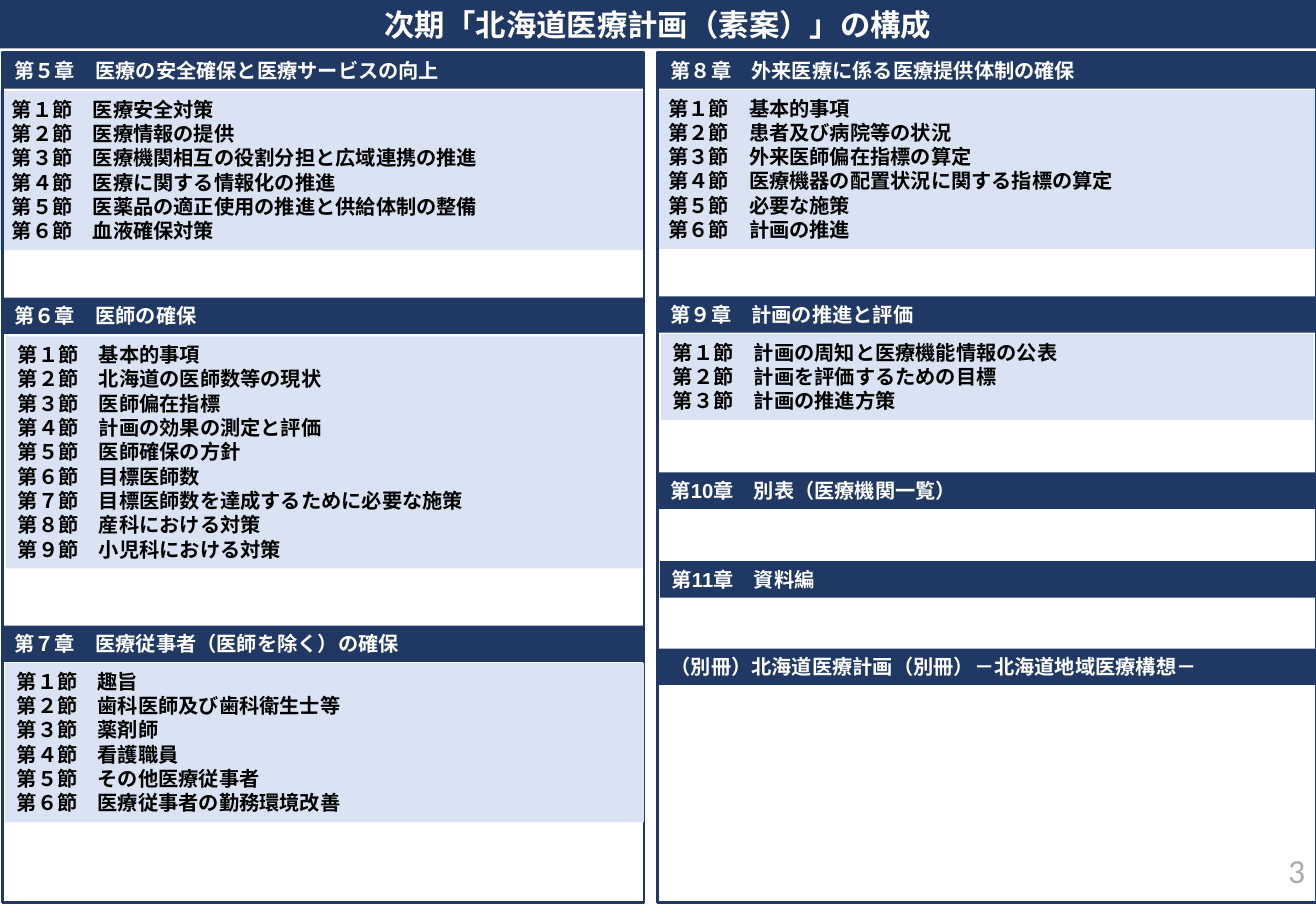
from itertools import groupby

from pptx import Presentation
from pptx import util as u
from pptx.dml.color import RGBColor
from pptx.enum import shapes, text

PX = 9144  # 100 px to the inch
COLORS = {"navy": "203864", "pale": "DAE3F3", "white": "FFFFFF",
          "black": "000000", "gray": "AFABAB"}
HEADING_HEIGHT, LINE_HEIGHT, LIST_PADDING = 30, 20, 11

deck = Presentation()
deck.slide_width, deck.slide_height = 1083 * PX, 750 * PX
slide = deck.slides.add_slide(deck.slide_layouts[6])


def add_panel(box, fill=None, lines=(), color="white", size=12,
              align=text.PP_ALIGN.LEFT):
    panel = slide.shapes.add_shape(shapes.MSO_SHAPE.RECTANGLE, *(n * PX for n in box))
    panel.shadow.inherit = False
    panel.line.fill.background()
    panel.fill.background()
    if fill:
        panel.fill.solid()
        panel.fill.fore_color.rgb = RGBColor.from_string(COLORS[fill])
    frame = panel.text_frame
    frame.word_wrap = True
    frame.vertical_anchor = text.MSO_ANCHOR.TOP
    if lines:
        frame.auto_size = text.MSO_AUTO_SIZE.SHAPE_TO_FIT_TEXT
    for number, line in enumerate(lines):
        paragraph = frame.add_paragraph() if number else frame.paragraphs[0]
        paragraph.alignment = align
        paragraph.font.name = "Calibri"
        paragraph.font.size = u.Pt(size)
        paragraph.font.bold = True
        paragraph.font.color.rgb = RGBColor.from_string(COLORS[color])
        # Half-width chapter numbers are set in Arial
        for is_ascii, letters in groupby(line, key=str.isascii):
            run = paragraph.add_run()
            run.text = "".join(letters)
            if is_ascii:
                run.font.name = "Arial"
    return panel


def add_chapter(heading, heading_box, list_box=None, sections=()):
    add_panel((*heading_box, HEADING_HEIGHT), "navy", [heading])
    if sections:
        lines = [f"第{digit}節　{name}" for digit, name in zip("１２３４５６７８９", sections)]
        height = LINE_HEIGHT * len(lines) + LIST_PADDING
        add_panel((*list_box, height), "pale", lines, "black")


# Chapters: heading, heading (left, top, width), list (left, top, width), sections
top_chapters = [
    ("第５章　医療の安全確保と医療サービスの向上", (2, 43, 528), (0, 75, 530),
     ["医療安全対策", "医療情報の提供", "医療機関相互の役割分担と広域連携の推進",
      "医療に関する情報化の推進", "医薬品の適正使用の推進と供給体制の整備", "血液確保対策"]),
    ("第８章　外来医療に係る医療提供体制の確保", (542, 43, 542), (540, 74, 543),
     ["基本的事項", "患者及び病院等の状況", "外来医師偏在指標の算定",
      "医療機器の配置状況に関する指標の算定", "必要な施策", "計画の推進"]),
]
lower_chapters = [
    ("第６章　医師の確保", (2, 245, 528), (5, 277, 524),
     ["基本的事項", "北海道の医師数等の現状", "医師偏在指標", "計画の効果の測定と評価",
      "医師確保の方針", "目標医師数", "目標医師数を達成するために必要な施策",
      "産科における対策", "小児科における対策"]),
    ("第７章　医療従事者（医師を除く）の確保", (2, 515, 528), (4, 546, 526),
     ["趣旨", "歯科医師及び歯科衛生士等", "薬剤師", "看護職員", "その他医療従事者",
      "医療従事者の勤務環境改善"]),
    ("第９章　計画の推進と評価", (542, 244, 542), (544, 275, 537),
     ["計画の周知と医療機能情報の公表", "計画を評価するための目標", "計画の推進方策"]),
    ("第10章　別表（医療機関一覧）", (542, 389, 542)),
    ("第11章　資料編", (543, 462, 540)),
    ("（別冊）北海道医療計画（別冊）－北海道地域医療構想－", (542, 534, 541)),
]

# Title bar
add_panel((0, 0, 1083, 40), "navy", ["次期「北海道医療計画（素案）」の構成"],
          size=18, align=text.PP_ALIGN.CENTER)

# The column outlines lie over the top chapters and under the lower ones
for chapter in top_chapters:
    add_chapter(*chapter)
for left, width in ((2, 528), (541, 542)):
    outline = add_panel((left, 43, width, 700))
    outline.line.color.rgb = RGBColor.from_string(COLORS["navy"])
    outline.line.width = u.Pt(1.5)
for chapter in lower_chapters:
    add_chapter(*chapter)

# Page number
page_box = slide.shapes.add_textbox(840 * PX, 696 * PX, 244 * PX, 40 * PX)
page_box.text_frame.word_wrap = True
page_box.text_frame.vertical_anchor = text.MSO_ANCHOR.MIDDLE
page = page_box.text_frame.paragraphs[0]
page.text = "3"
page.alignment = text.PP_ALIGN.RIGHT
page.font.name = "Calibri"
page.font.size = u.Pt(20)
page.font.color.rgb = RGBColor.from_string(COLORS["gray"])

deck.save("out.pptx")
